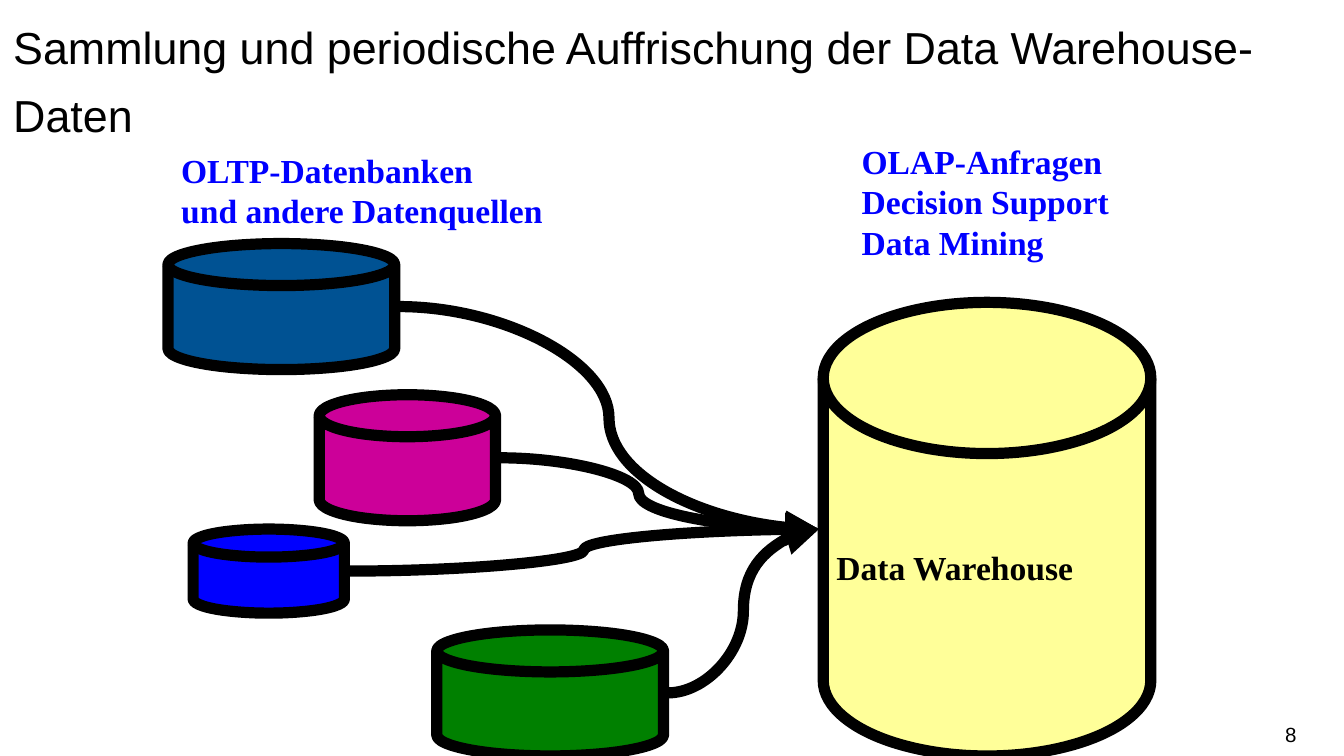
from lxml import etree
from pptx import Presentation
from pptx.dml.color import RGBColor
from pptx.enum.shapes import MSO_CONNECTOR, MSO_SHAPE as SHAPE
from pptx.enum.text import MSO_ANCHOR as ANCHOR, PP_ALIGN as ALIGN
from pptx.oxml.ns import qn
from pptx.util import Pt

PX = 9525  # EMU per px, 96 px to the inch
BLACK = RGBColor(0x00, 0x00, 0x00)
BLUE = RGBColor(0x00, 0x00, 0xFF)
STEEL = RGBColor(0x00, 0x52, 0x93)
MAGENTA = RGBColor(0xCC, 0x00, 0x99)
GREEN = RGBColor(0x00, 0x80, 0x00)
YELLOW = RGBColor(0xFF, 0xFF, 0x99)

SERIF = {"name": "Times New Roman", "size": Pt(18), "bold": True}
STROKE = Pt(6)
GAP = 3  # px between a disk and the end of its arrow

# Data sources: left, top, width, height, fill, bend of the arrow
SOURCES = [
    (120, 174, 162, 90, STEEL, 0.5),
    (228, 282, 126, 90, MAGENTA, 0.435),
    (312, 450, 162, 90, GREEN, 0.5),
    (138, 378, 108, 60, BLUE, 0.5),
]
WAREHOUSE = (588, 216, 234, 324)


def scale(*lengths):
    return [length * PX for length in lengths]


def write(frame, lines, font, color, wrap=True, anchor=ANCHOR.TOP, margins=None, **layout):
    """Put one paragraph per line into a text frame."""
    frame.word_wrap = wrap
    frame.vertical_anchor = anchor
    for side, value in (margins or {}).items():
        setattr(frame, side, value)
    for index, line in enumerate(lines):
        para = frame.add_paragraph() if index else frame.paragraphs[0]
        for key, value in ({"alignment": ALIGN.LEFT} | layout).items():
            setattr(para, key, value)
        span = para.add_run()
        span.text = line
        for key, value in font.items():
            setattr(span.font, key, value)
        span.font.color.rgb = color


def add_text(page, place, lines, font, color, **layout):
    box = page.shapes.add_textbox(*scale(*place))
    write(box.text_frame, lines, font, color, **layout)


def add_disk(page, place, fill):
    disk = page.shapes.add_shape(SHAPE.FLOWCHART_MAGNETIC_DISK, *scale(*place))
    disk.shadow.inherit = False
    disk.fill.solid()
    disk.fill.fore_color.rgb = fill
    disk.line.color.rgb = BLACK
    disk.line.width = STROKE
    return disk


def add_arrow(page, start, end, bend):
    """Draw a curved arrow that turns at the given share of its width."""
    arrow = page.shapes.add_connector(MSO_CONNECTOR.CURVE, *scale(*start, *end))
    arrow.line.color.rgb = BLACK
    arrow.line.width = STROKE
    props = arrow._element.spPr
    etree.SubElement(props.find(qn("a:ln")), qn("a:tailEnd"), type="triangle")
    etree.SubElement(props, qn("a:effectLst"))
    guides = props.find(qn("a:prstGeom")).find(qn("a:avLst"))
    etree.SubElement(guides, qn("a:gd"), name="adj1", fmla=f"val {round(bend * 100000)}")


def main():
    deck = Presentation()
    deck.slide_width, deck.slide_height = scale(960, 540)
    page = deck.slides.add_slide(deck.slide_layouts[6])

    # Title
    add_text(page, (0, 0, 960, 90),
             ["Sammlung und periodische Auffrischung der Data Warehouse-Daten"],
             {"name": "Arial", "size": Pt(24)}, BLACK, line_spacing=1.25)

    # Data sources and warehouse
    for *place, fill, _ in SOURCES:
        add_disk(page, place, fill)
    warehouse = add_disk(page, WAREHOUSE, YELLOW)
    write(warehouse.text_frame, ["Data Warehouse"], SERIF, BLACK,
          wrap=False, anchor=ANCHOR.MIDDLE)

    # Captions
    add_text(page, (120, 102, 280, 68), ["OLTP-Datenbanken", "und andere Datenquellen"],
             SERIF, BLUE, wrap=False)
    add_text(page, (606, 96, 198, 97), ["OLAP-Anfragen", "Decision Support", "Data Mining"],
             SERIF, BLUE, wrap=False)

    # Arrows from the side of each source to the warehouse
    left, top, _, height = WAREHOUSE
    target = (left - GAP, top + height // 2)
    for left, top, width, height, _, bend in SOURCES:
        add_arrow(page, (left + width + GAP, top + height // 2), target, bend)

    # Page number
    add_text(page, (711, 510, 215, 29), ["8"], {"name": "Arial", "size": Pt(11)}, BLACK,
             anchor=ANCHOR.MIDDLE, margins={"margin_left": 0, "margin_right": 0},
             alignment=ALIGN.RIGHT)

    deck.save("out.pptx")


if __name__ == "__main__":
    main()
